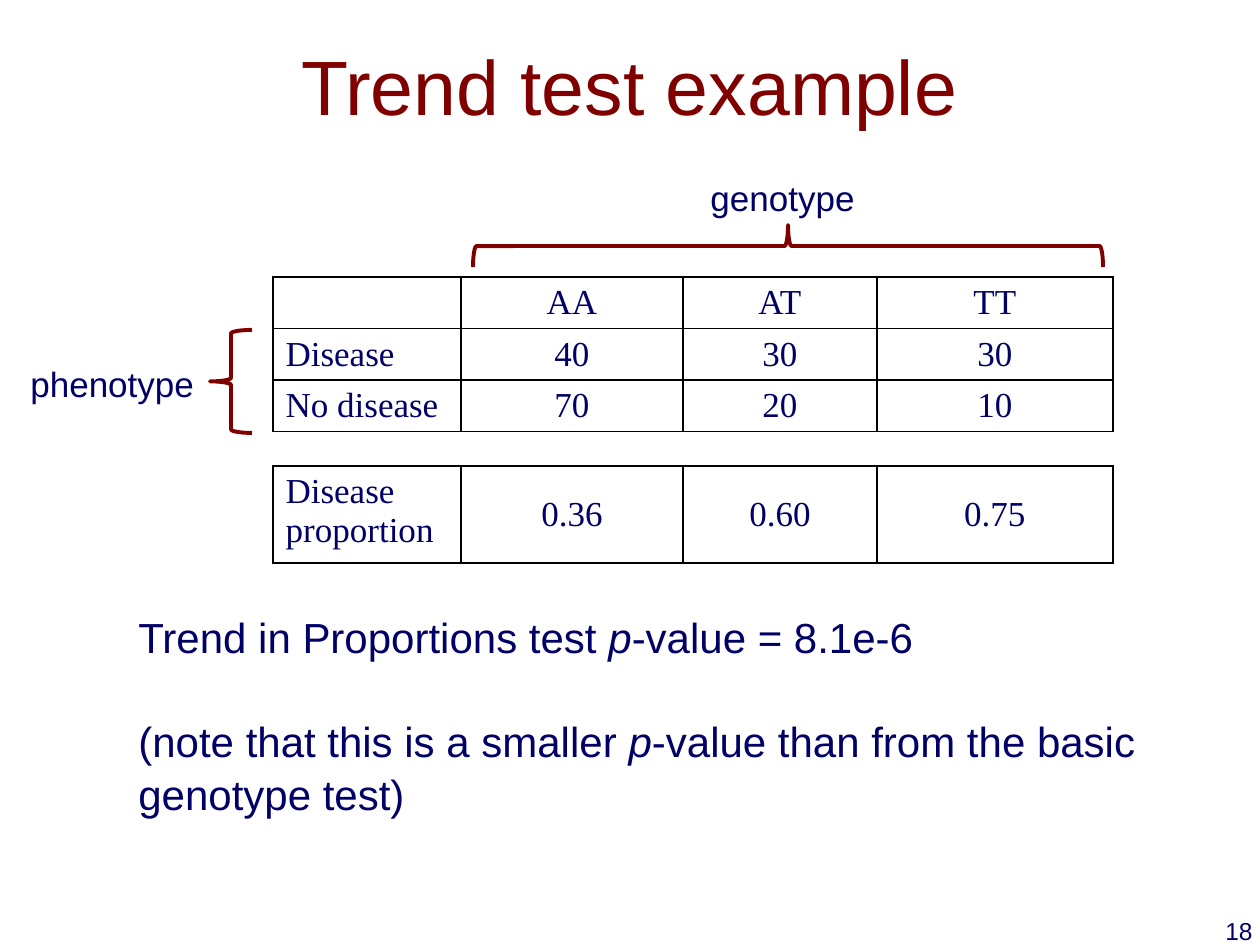
from lxml.etree import SubElement
from pptx import Presentation
from pptx.dml.color import RGBColor
from pptx.enum.shapes import MSO_SHAPE
from pptx.enum.text import MSO_ANCHOR, PP_ALIGN
from pptx.oxml.ns import qn
from pptx.util import Pt

PX = 914400 / 126
HUES = {"title": "800000", "text": "000066", "rule": "000000"}
LEFT, MID, RIGHT = PP_ALIGN.LEFT, PP_ALIGN.CENTER, PP_ALIGN.RIGHT
LEAD = 1.06

# Text boxes: place, paragraphs of (run, italic), align, wrap, anchor, font
TEXTS = [
    ((94, 3, 1071, 157), [[("Trend test example", False)]], MID, True,
     MSO_ANCHOR.MIDDLE, {"size": Pt(44), "hue": "title"}),
    ((18, 354, 190, 55), [[("phenotype", False)]], LEFT, False,
     MSO_ANCHOR.TOP, {"size": Pt(20), "hue": "text"}),
    ((698, 168, 171, 55), [[("genotype", False)]], LEFT, False,
     MSO_ANCHOR.TOP, {"size": Pt(20), "hue": "text"}),
    ((126, 602, 1050, 217),
     [[("Trend in Proportions test ", False), ("p", True),
       ("-value = 8.1e-6", False)],
      [("(note that this is a smaller ", False), ("p", True),
       ("-value than from the basic genotype test)", False)]],
     LEFT, True, MSO_ANCHOR.TOP, {"size": Pt(24), "hue": "text"}),
    ((1003, 908, 262, 63), [[("18", False)]], RIGHT, True,
     MSO_ANCHOR.TOP, {"size": Pt(14), "hue": "text"}),
]

# Tables: top, row height, anchor of values, rows
COLS = [188, 222, 194, 236]
TABLES = [
    (277, 51, MSO_ANCHOR.TOP, [
        ["", "AA", "AT", "TT"],
        ["Disease", "40", "30", "30"],
        ["No disease", "70", "20", "10"]]),
    (466, 97, MSO_ANCHOR.MIDDLE, [
        ["Disease proportion", "0.36", "0.60", "0.75"]]),
]

# Braces: place before turning, angle
BRACES = [((210, 330, 42, 103), 0), ((767, -69, 42, 630), 90)]


def emu(box):
    return [round(n * PX) for n in box]


def color(key):
    return RGBColor.from_string(HUES[key])


def style(font, look):
    for name, value in look.items():
        if name == "hue":
            font.color.rgb = color(value)
        else:
            setattr(font, name, value)


def add_text(slide, box, paras, align, wrap, anchor, look):
    frame = slide.shapes.add_textbox(*emu(box)).text_frame
    frame.word_wrap = wrap
    frame.vertical_anchor = anchor
    for i, runs in enumerate(paras):
        para = frame.paragraphs[0] if i == 0 else frame.add_paragraph()
        para.alignment = align
        para.line_spacing = LEAD
        if i:
            para.space_before = Pt(29)
        for text, slant in runs:
            run = para.add_run()
            run.text = text
            style(run.font, {"name": "Arial", "italic": slant, **look})


def add_rules(cell):
    props = cell._tc.get_or_add_tcPr()
    for i, side in enumerate(("lnL", "lnR", "lnT", "lnB")):
        line = props.makeelement(qn("a:" + side), {"w": str(Pt(1))})
        fill = SubElement(line, qn("a:solidFill"))
        SubElement(fill, qn("a:srgbClr"), val=HUES["rule"])
        props.insert(i, line)


def add_grid(slide, top, high, anchor, rows):
    box = emu((273, top, sum(COLS), high * len(rows)))
    table = slide.shapes.add_table(len(rows), len(COLS), *box).table
    table.first_row = table.horz_banding = False
    for col, wide in zip(table.columns, COLS):
        col.width = round(wide * PX)
    for r, row in enumerate(rows):
        table.rows[r].height = round(high * PX)
        for c, text in enumerate(row):
            cell = table.cell(r, c)
            cell.fill.background()
            cell.vertical_anchor = anchor if c else MSO_ANCHOR.TOP
            cell.text = text
            para = cell.text_frame.paragraphs[0]
            para.alignment = MID if c else LEFT
            look = {"name": "Times New Roman", "size": Pt(20), "hue": "text"}
            style(para.runs[0].font if para.runs else para.font, look)
            add_rules(cell)


def add_brace(slide, box, angle):
    brace = slide.shapes.add_shape(MSO_SHAPE.LEFT_BRACE, *emu(box))
    brace.rotation = angle
    brace.shadow.inherit = False
    brace.fill.background()
    brace.line.color.rgb = color("title")
    brace.line.width = Pt(2.25)


def main():
    deck = Presentation()
    deck.slide_width, deck.slide_height = emu((1260, 945))
    slide = deck.slides.add_slide(deck.slide_layouts[6])
    for item in TABLES:
        add_grid(slide, *item)
    for item in BRACES:
        add_brace(slide, *item)
    for item in TEXTS:
        add_text(slide, *item)
    deck.save("out.pptx")


if __name__ == "__main__":
    main()
